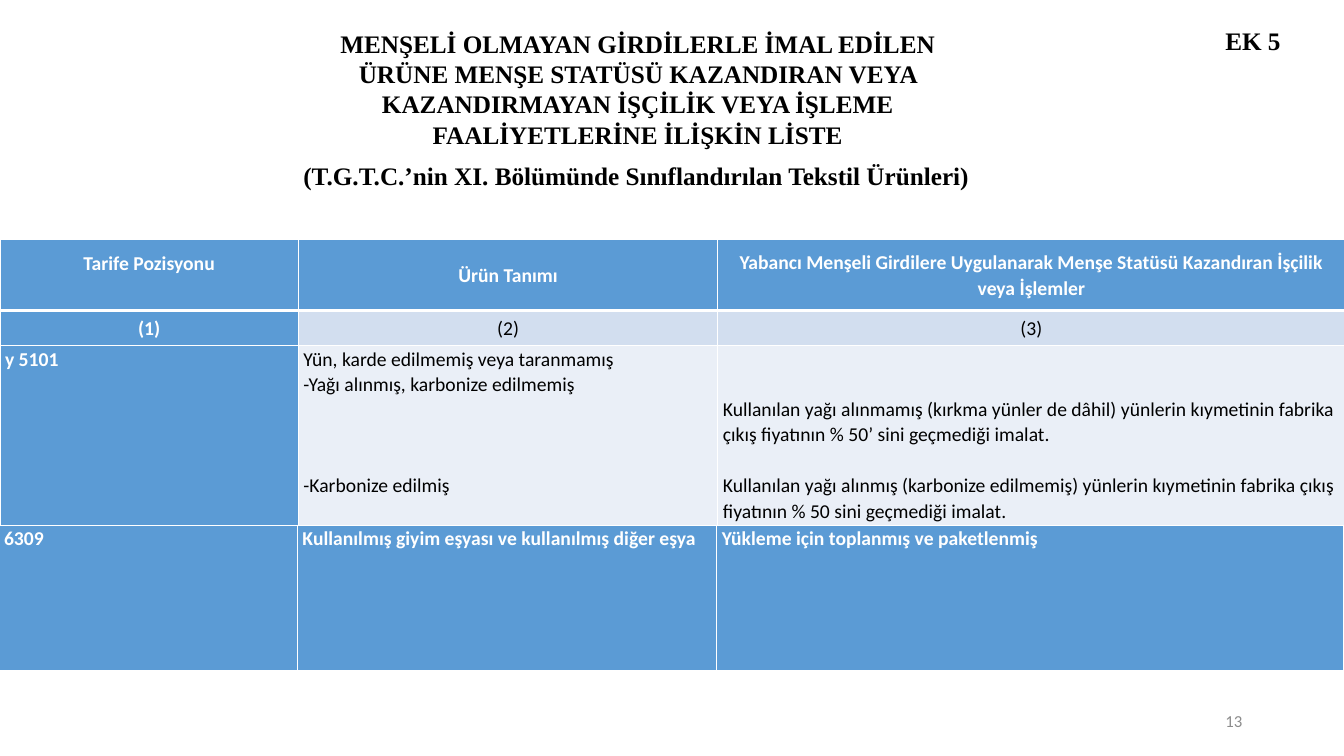
"""Build the slide listing origin rules for textile products."""
import pptx
import pptx.util
import pptx.dml.color
import pptx.enum.text
import pptx.oxml

Inches, Pt = pptx.util.Inches, pptx.util.Pt
ALIGN = pptx.enum.text.PP_ALIGN
ANCHOR = pptx.enum.text.MSO_ANCHOR
FIT = pptx.enum.text.MSO_AUTO_SIZE

THEME = {
    "head": "Times New Roman", "body": "Calibri",
    "black": "000000", "white": "FFFFFF", "gray": "8C8C8C",
    "blue": "5B9BD5", "mid": "D2DEEF", "pale": "EAEFF7",
    "title": 18, "cell": 14, "page": 12, "lead": 1.07,
}
LINE = 0.25
PAD = 0.05
COLS = [2.96, 4.16, 6.22]

LABELS = [
    {"text": "13", "box": (9.42, 6.95, 3, 0.4), "align": ALIGN.RIGHT, "wrap": True,
     "anchor": ANCHOR.MIDDLE, "style": ("body", "page", "gray", False)},
    {"text": "EK 5", "box": (12.04, 0.2, 0.76, 0.4), "align": ALIGN.RIGHT, "wrap": False},
    {"text": "MENŞELİ OLMAYAN GİRDİLERLE İMAL EDİLEN ÜRÜNE MENŞE STATÜSÜ KAZANDIRAN "
             "VEYA KAZANDIRMAYAN İŞÇİLİK VEYA İŞLEME FAALİYETLERİNE İLİŞKİN LİSTE",
     "box": (2.99, 0.23, 6.67, 1.31), "align": ALIGN.CENTER, "wrap": True},
    {"text": "(T.G.T.C.’nin XI. Bölümünde Sınıflandırılan Tekstil Ürünleri)",
     "box": (2.47, 1.54, 7.68, 0.4), "align": ALIGN.CENTER, "wrap": True},
]

HEAD = ["Tarife Pozisyonu", "Ürün Tanımı",
        "Yabancı Menşeli Girdilere Uygulanarak Menşe Statüsü Kazandıran İşçilik veya İşlemler"]
WOOL = [
    "y 5101",
    "Yün, karde edilmemiş veya taranmamış\n-Yağı alınmış, karbonize edilmemiş\n-Karbonize edilmiş",
    "Kullanılan yağı alınmamış (kırkma yünler de dâhil) yünlerin kıymetinin fabrika "
    "çıkış fiyatının % 50’ sini geçmediği imalat.\n"
    "Kullanılan yağı alınmış (karbonize edilmemiş) yünlerin kıymetinin fabrika "
    "çıkış fiyatının % 50 sini geçmediği imalat.",
]
USED = ["6309", "Kullanılmış giyim eşyası ve kullanılmış diğer eşya",
        "Yükleme için toplanmış ve paketlenmiş"]

TABLES = [
    {"at": (0, 2.38), "rows": [
        {"high": 0.7, "text": HEAD, "fill": "blue", "mid": True, "edge": (1, 3)},
        {"high": 0.35, "text": ["(1)", "(2)", "(3)"], "fill": "mid", "mid": True, "edge": (3, 1)},
        {"high": 2.46, "text": WOOL, "fill": "pale", "mid": False, "edge": (1, 1),
         "top": {2: 2}, "gaps": {1: 3, 2: 1}},
    ]},
    {"at": (-0.01, 5.21), "rows": [
        {"high": 1.46, "text": USED, "fill": "blue", "mid": False, "edge": (1, 3)},
    ]},
]


def tint(name):
    return pptx.dml.color.RGBColor.from_string(THEME[name])


def style(para, face, size, color, bold):
    for run in para.runs:
        font = run.font
        font.name, font.size, font.bold = THEME[face], Pt(THEME[size]), bold
        font.color.rgb = tint(color)


def add_label(slide, label):
    box = slide.shapes.add_textbox(*map(Inches, label["box"]))
    frame = box.text_frame
    frame.text = label["text"]
    frame.word_wrap = label["wrap"]
    frame.vertical_anchor = label.get("anchor", ANCHOR.TOP)
    frame.auto_size = FIT.NONE if "anchor" in label else FIT.SHAPE_TO_FIT_TEXT
    para = frame.paragraphs[0]
    para.alignment = label["align"]
    style(para, *label.get("style", ("head", "title", "black", True)))


def add_edges(cell, top, base):
    props = cell._tc.get_or_add_tcPr()
    for side, width in zip("LRTB", (1, 1, top, base)):
        props.append(pptx.oxml.parse_xml(
            f'<a:ln{side} xmlns:a="http://schemas.openxmlformats.org/drawingml/2006/main" '
            f'w="{Pt(width)}"><a:solidFill><a:srgbClr val="{THEME["white"]}"/>'
            f'</a:solidFill></a:ln{side}>'))


def fill_cell(cell, row, col):
    strong = col == 0 or row["fill"] == "blue"
    add_edges(cell, *row["edge"])
    cell.fill.solid()
    cell.fill.fore_color.rgb = tint("blue" if strong else row["fill"])
    cell.margin_left = cell.margin_right = Inches(PAD)
    cell.margin_top = Inches(row.get("top", {}).get(col, 0) * LINE)
    cell.margin_bottom = Inches(LINE if row["text"][col] == HEAD[0] else 0)
    cell.vertical_anchor = ANCHOR.MIDDLE if row["mid"] else ANCHOR.TOP
    cell.text_frame.text = row["text"][col]
    paras = cell.text_frame.paragraphs
    for para in paras:
        para.alignment = ALIGN.CENTER if row["mid"] else ALIGN.LEFT
        para.line_spacing = THEME["lead"]
        style(para, "body", "cell", "white" if strong else "black", strong)
    if col in row.get("gaps", {}):
        paras[-1].space_before = Inches(row["gaps"][col] * LINE)


def add_grid(slide, left, top, rows):
    high = sum(row["high"] for row in rows)
    spot = map(Inches, (left, top, sum(COLS), high))
    table = slide.shapes.add_table(len(rows), len(COLS), *spot).table
    for col, width in enumerate(COLS):
        table.columns[col].width = Inches(width)
    for num, row in enumerate(rows):
        table.rows[num].height = Inches(row["high"])
        for col in range(len(COLS)):
            fill_cell(table.cell(num, col), row, col)


def main():
    deck = pptx.Presentation()
    deck.slide_width, deck.slide_height = Inches(13.33), Inches(7.5)
    slide = deck.slides.add_slide(deck.slide_layouts[6])
    for label in LABELS:
        add_label(slide, label)
    for grid in TABLES:
        add_grid(slide, *grid["at"], grid["rows"])
    deck.save("out.pptx")


if __name__ == "__main__":
    main()
